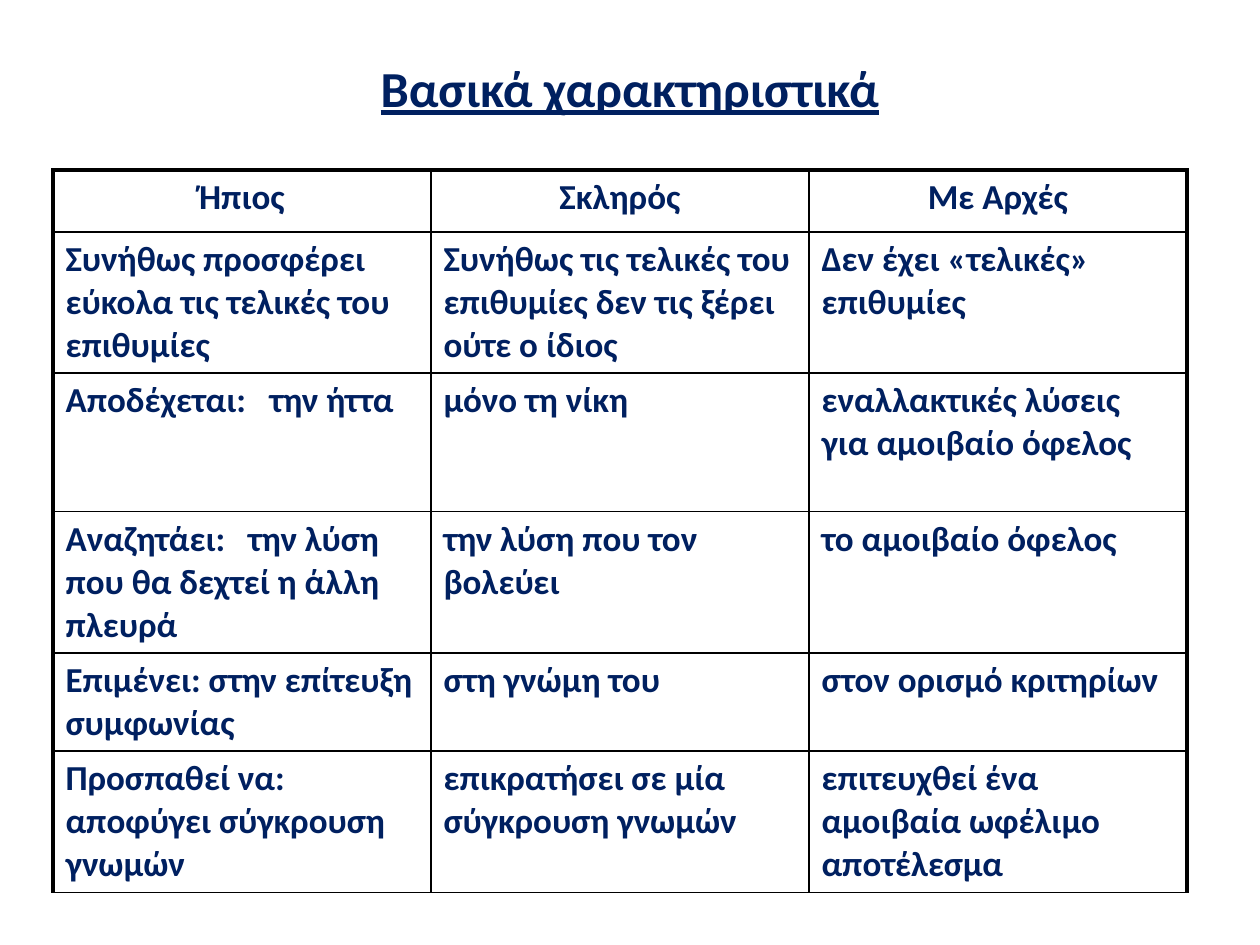
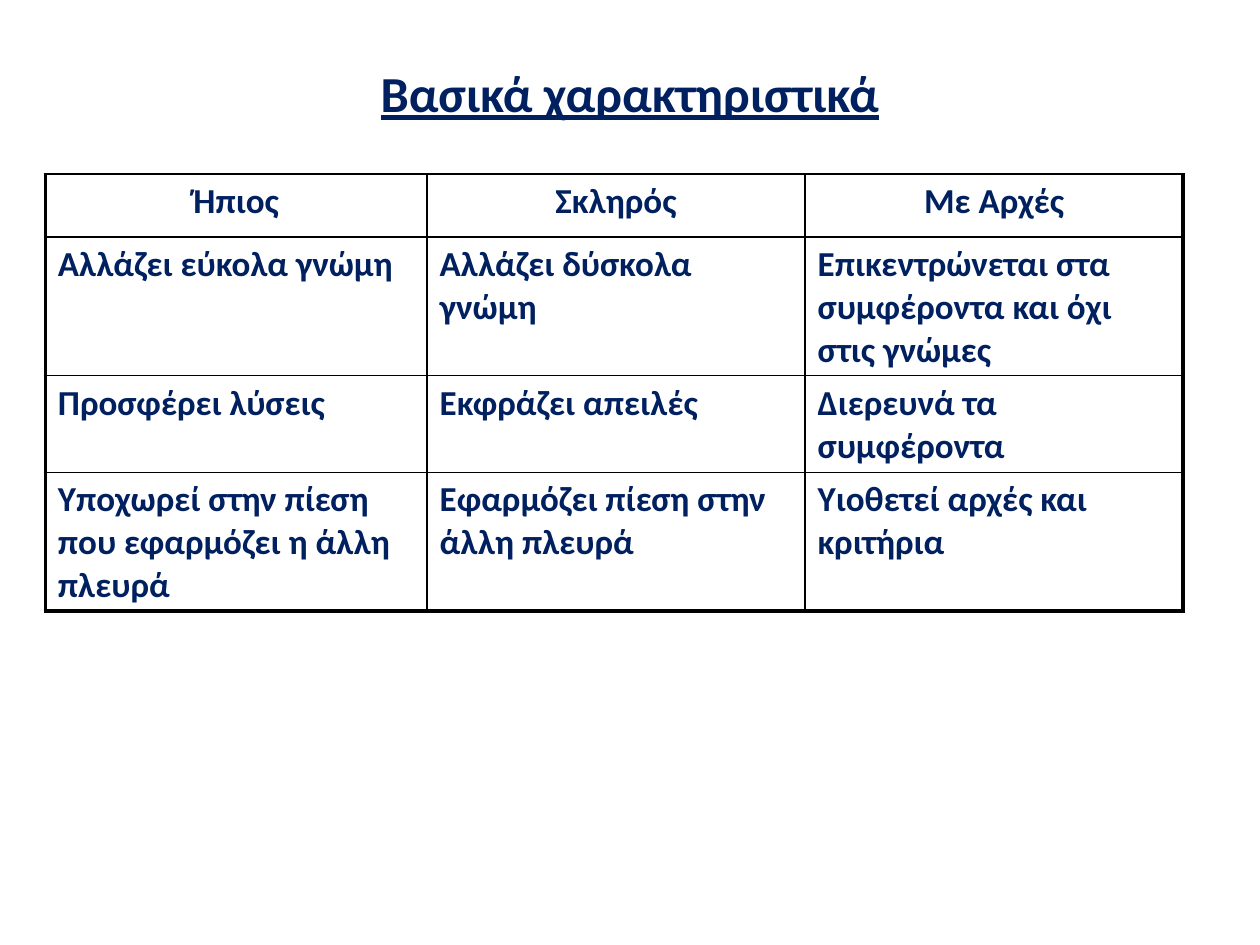
from lxml import etree
from pptx import Presentation
from pptx.dml.color import RGBColor
from pptx.enum.text import MSO_ANCHOR, PP_ALIGN
from pptx.oxml.ns import qn
from pptx.util import Inches, Pt

CENTER, LEFT = PP_ALIGN.CENTER, PP_ALIGN.LEFT
MIDDLE = MSO_ANCHOR.MIDDLE

# Content
TITLE = "Βασικά χαρακτηριστικά"
HEADERS = ("Ήπιος", "Σκληρός", "Με Αρχές")
SLIDES = [
    {
        "title_top": 0.43,
        "table_at": (0.42, 1.35, 9, 5.67),
        "columns": (3, 3, 3),
        "heights": (0.49, 0.77, 1.1, 0.77, 0.78, 1.1),
        "top_line": 2.25,
        "bottom_line": 1,
        "rows": [
            ("Συνήθως προσφέρει εύκολα τις τελικές του επιθυμίες",
             "Συνήθως τις τελικές του επιθυμίες δεν τις ξέρει ούτε ο ίδιος",
             "Δεν έχει «τελικές» επιθυμίες"),
            ("Αποδέχεται:\tτην ήττα",
             "μόνο τη νίκη",
             "εναλλακτικές λύσεις για αμοιβαίο όφελος"),
            ("Αναζητάει:\tτην λύση που θα δεχτεί η άλλη πλευρά",
             "την λύση που τον βολεύει",
             "το αμοιβαίο όφελος"),
            ("Επιμένει: στην επίτευξη συμφωνίας",
             "στη γνώμη του",
             "στον ορισμό κριτηρίων"),
            ("Προσπαθεί να: αποφύγει σύγκρουση γνωμών",
             "επικρατήσει σε μία σύγκρουση γνωμών",
             "επιτευχθεί ένα αμοιβαία ωφέλιμο αποτέλεσμα"),
        ],
    },
    {
        "title_top": 0.47,
        "table_at": (0.36, 1.38, 9.03, 3.47),
        "columns": (3.03, 3, 3),
        "heights": (0.5, 0.77, 0.43, 0.43),
        "top_line": 1,
        "bottom_line": 2.25,
        "rows": [
            ("Αλλάζει εύκολα γνώμη",
             "Αλλάζει δύσκολα γνώμη",
             "Επικεντρώνεται στα συμφέροντα και όχι στις γνώμες"),
            ("Προσφέρει λύσεις",
             "Εκφράζει απειλές",
             "Διερευνά τα συμφέροντα"),
            ("Υποχωρεί στην πίεση που εφαρμόζει η άλλη πλευρά",
             "Εφαρμόζει πίεση στην άλλη πλευρά",
             "Υιοθετεί αρχές και κριτήρια"),
        ],
    },
]
# Where the text after a label starts, in inches from the cell's text edge
TAB_STOPS = {"Αποδέχεται:": 1.62, "Αναζητάει:": 1.45}

# Shared style
NAVY = RGBColor(0x00, 0x20, 0x60)
BLACK = RGBColor(0x00, 0x00, 0x00)
TITLE_FONT = {"name": "Calibri", "size": Pt(28.8), "bold": True, "underline": True}
CELL_FONT = {"name": "Calibri", "size": Pt(20), "bold": True}
CELL_MARGINS = {"margin_left": Inches(0.1), "margin_right": Inches(0.1),
                "margin_top": Inches(0.05), "margin_bottom": Inches(0.05)}
OUTER, INNER = 2.25, 1


def set_attrs(obj, values):
    for name, value in values.items():
        setattr(obj, name, value)


def add_text(p, text, font, align):
    p.alignment = align
    r = p.add_run()
    r.text = text
    set_attrs(r.font, font)
    r.font.color.rgb = NAVY


def add_title(s, top):
    tf = s.shapes.add_textbox(Inches(0.5), Inches(top), Inches(9), Inches(0.53)).text_frame
    tf.word_wrap = True
    tf.vertical_anchor = MIDDLE
    add_text(tf.paragraphs[0], TITLE, TITLE_FONT, CENTER)


def space_paragraph(p, text):
    """Add 20% space before, and a tab stop where the text has a label."""
    pPr = p._p.get_or_add_pPr()
    before = etree.SubElement(pPr, qn("a:spcBef"))
    etree.SubElement(before, qn("a:spcPct"), val="20000")
    label, tab, _ = text.partition("\t")
    if tab:
        stops = etree.SubElement(pPr, qn("a:tabLst"))
        etree.SubElement(stops, qn("a:tab"), pos=str(Inches(TAB_STOPS[label])), algn="l")


def set_borders(cell, widths):
    tcPr = cell._tc.get_or_add_tcPr()
    for side, width in widths.items():
        ln = etree.SubElement(tcPr, qn("a:ln" + side), w=str(Pt(width)))
        fill = etree.SubElement(ln, qn("a:solidFill"))
        etree.SubElement(fill, qn("a:srgbClr"), val=str(BLACK))


def add_comparison(s, data):
    rows = [HEADERS] + data["rows"]
    last_row, last_col = len(rows) - 1, len(HEADERS) - 1
    frame = s.shapes.add_table(len(rows), len(HEADERS), *map(Inches, data["table_at"]))
    table = frame.table
    set_attrs(table, {"first_row": False, "horz_banding": False})
    for column, width in zip(table.columns, data["columns"]):
        column.width = Inches(width)
    for row, height in zip(table.rows, data["heights"]):
        row.height = Inches(height)
    frame.height = Inches(data["table_at"][3])

    for i, texts in enumerate(rows):
        for j, text in enumerate(texts):
            cell = table.cell(i, j)
            set_attrs(cell, CELL_MARGINS)
            set_borders(cell, {
                "L": OUTER if j == 0 else INNER,
                "R": OUTER if j == last_col else INNER,
                "T": data["top_line"] if i == 0 else INNER,
                "B": data["bottom_line"] if i == last_row else INNER,
            })
            cell.fill.background()
            p = cell.text_frame.paragraphs[0]
            add_text(p, text, CELL_FONT, CENTER if i == 0 else LEFT)
            space_paragraph(p, text)


def main():
    prs = Presentation()
    prs.slide_width, prs.slide_height = Inches(10), Inches(7.5)
    for data in SLIDES:
        s = prs.slides.add_slide(prs.slide_layouts[6])
        add_comparison(s, data)
        add_title(s, data["title_top"])
    prs.save("out.pptx")


if __name__ == "__main__":
    main()
